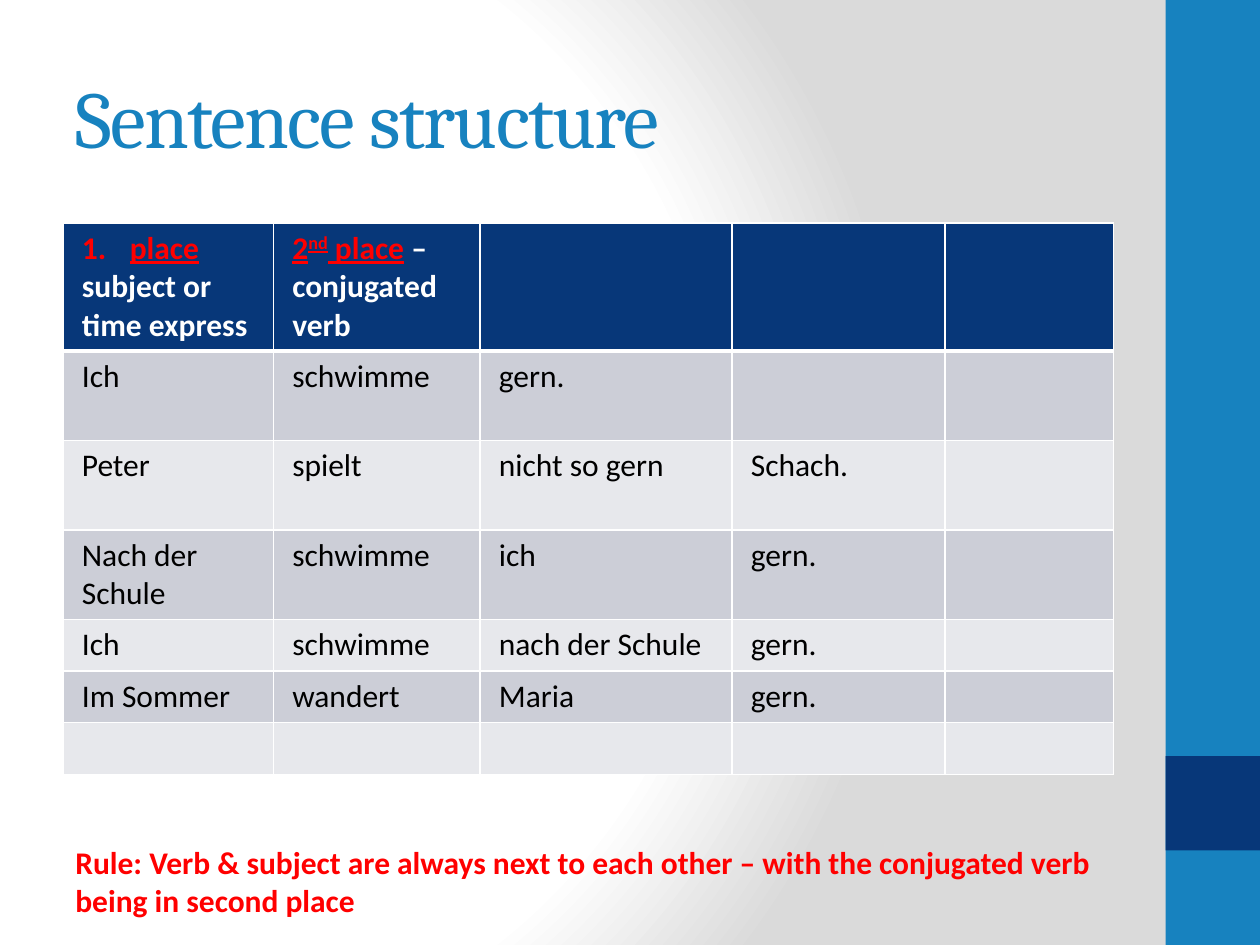
"""Build a German sentence structure slide with a word order table."""
from pptx import Presentation, util as u
from pptx.dml.color import RGBColor
from pptx.enum import shapes, text
from pptx.oxml import parse_xml
from pptx.oxml.ns import nsdecls, qn

COLORS = {
    "blue": "1782BF", "navy": "073779", "red": "FF0000", "white": "FFFFFF",
    "black": "000000", "gray": "DADADA", "odd": "CCCED7", "even": "E7E8EC",
}
TITLE = "Sentence structure"
RULE = ("Rule: Verb & subject are always next to each other – "
        "with the conjugated verb being in second place")
PLACE = {"color": "red", "bold": True, "underline": True}
ROLE = {"color": "white", "bold": True}
HEADERS = [
    [[("place", PLACE)], [("subject or time express", ROLE)]],
    [[("2", PLACE), ("nd", {**PLACE, "baseline": "30000"}), (" place", PLACE),
      (" – conjugated verb", ROLE)]],
]
SENTENCES = [
    ["Ich", "schwimme", "gern."],
    ["Peter", "spielt", "nicht so gern", "Schach."],
    ["Nach der Schule", "schwimme", "ich", "gern."],
    ["Ich", "schwimme", "nach der Schule", "gern."],
    ["Im Sommer", "wandert", "Maria", "gern."],
    [],
]
COLUMN_WIDTHS = [1.67, 1.64, 2, 1.69, 1.34]
ROW_HEIGHTS = [1.01] + [0.71] * 3 + [0.41] * 3
SIDEBAR = [((9.25, 0, 0.75, 7.5), "blue"), ((9.25, 6, 0.75, 0.75), "navy")]
LEFT, WIDTH = 0.5, 8.33


def inches(*lengths):
    return [u.Inches(length) for length in lengths]


def paint(fill, color):
    fill.solid()
    fill.fore_color.rgb = RGBColor.from_string(COLORS[color])


def add_run(paragraph, words, color="black", size=18, name="Calibri",
            baseline=None, **font_values):
    run = paragraph.add_run()
    run.text = words
    for key, value in {"size": u.Pt(size), "name": name, "bold": False,
                       **font_values}.items():
        setattr(run.font, key, value)
    run.font.color.rgb = RGBColor.from_string(COLORS[color])
    if baseline:
        run._r.get_or_add_rPr().set("baseline", baseline)
    return run


def set_background(slide):
    stops = "".join(
        f'<a:gs pos="{position * 1000}"><a:srgbClr val="{COLORS[color]}"/></a:gs>'
        for position, color in [(0, "white"), (75, "white"), (100, "gray")])
    slide._element.cSld.insert(0, parse_xml(
        f'<p:bg {nsdecls("p", "a")}><p:bgPr><a:gradFill rotWithShape="1">'
        f'<a:gsLst>{stops}</a:gsLst><a:path path="circle">'
        '<a:fillToRect l="20000" t="50000" r="100000" b="50000"/></a:path>'
        '</a:gradFill><a:effectLst/></p:bgPr></p:bg>'))


def add_sidebar(slide):
    for box, color in SIDEBAR:
        shape = slide.shapes.add_shape(shapes.MSO_SHAPE.RECTANGLE, *inches(*box))
        shape.shadow.inherit = False
        paint(shape.fill, color)
        shape.line.fill.background()


def format_title(slide):
    title = slide.shapes.title
    box = inches(LEFT, 0.3, WIDTH, 1.25)
    for key, value in zip(("left", "top", "width", "height"), box):
        setattr(title, key, value)
    title.text_frame.vertical_anchor = text.MSO_ANCHOR.MIDDLE
    paragraph = title.text_frame.paragraphs[0]
    paragraph.alignment = text.PP_ALIGN.LEFT
    run = add_run(paragraph, TITLE, "blue", 46, "Cambria")
    run._r.get_or_add_rPr().set("spc", "-100")


def set_borders(cell, row):
    widths = {"L": 1, "R": 1, "T": 3 if row == 1 else 1, "B": 3 if row == 0 else 1}
    for side, points in widths.items():
        cell._tc.get_or_add_tcPr().append(parse_xml(
            f'<a:ln{side} {nsdecls("a")} w="{u.Pt(points)}"><a:solidFill>'
            f'<a:srgbClr val="{COLORS["white"]}"/></a:solidFill></a:ln{side}>'))


def number_paragraph(paragraph):
    properties = paragraph._p.get_or_add_pPr()
    indent = u.Inches(0.38)
    properties.set("marL", str(indent))
    properties.set("indent", str(-indent))
    number = properties.makeelement(qn("a:buAutoNum"), {"type": "arabicPeriod"})
    properties.append(number)


def fill_cell(cell, paragraphs):
    frame = cell.text_frame
    for index, runs in enumerate(paragraphs):
        paragraph = frame.add_paragraph() if index else frame.paragraphs[0]
        for words, font_values in runs:
            add_run(paragraph, words, **font_values)
    if not paragraphs:
        frame.paragraphs[0].font.size = u.Pt(18)


def add_word_order_table(slide):
    table = slide.shapes.add_table(
        len(ROW_HEIGHTS), len(COLUMN_WIDTHS),
        *inches(LEFT, 1.77, sum(COLUMN_WIDTHS), sum(ROW_HEIGHTS))).table
    table.horz_banding = False
    for column, width in zip(table.columns, COLUMN_WIDTHS):
        column.width = u.Inches(width)
    for row, height in zip(table.rows, ROW_HEIGHTS):
        row.height = u.Inches(height)
    content = [HEADERS] + [[[[(words, {})]] for words in sentence]
                           for sentence in SENTENCES]
    for row, entries in enumerate(content):
        color = "navy" if row == 0 else "odd" if row % 2 else "even"
        for column in range(len(COLUMN_WIDTHS)):
            cell = table.cell(row, column)
            cell.margin_left = cell.margin_right = u.Inches(0.15)
            set_borders(cell, row)
            paint(cell.fill, color)
            fill_cell(cell, entries[column] if column < len(entries) else [])
    number_paragraph(table.cell(0, 0).text_frame.paragraphs[0])


def add_rule(slide):
    frame = slide.shapes.add_textbox(*inches(LEFT, 6.64, WIDTH, 0.71)).text_frame
    frame.word_wrap = True
    frame.auto_size = text.MSO_AUTO_SIZE.SHAPE_TO_FIT_TEXT
    add_run(frame.paragraphs[0], RULE, "red", bold=True)


def main():
    presentation = Presentation()
    presentation.slide_width, presentation.slide_height = inches(10, 7.5)
    slide = presentation.slides.add_slide(presentation.slide_layouts[5])
    set_background(slide)
    add_sidebar(slide)
    format_title(slide)
    add_word_order_table(slide)
    add_rule(slide)
    presentation.save("out.pptx")


if __name__ == "__main__":
    main()
